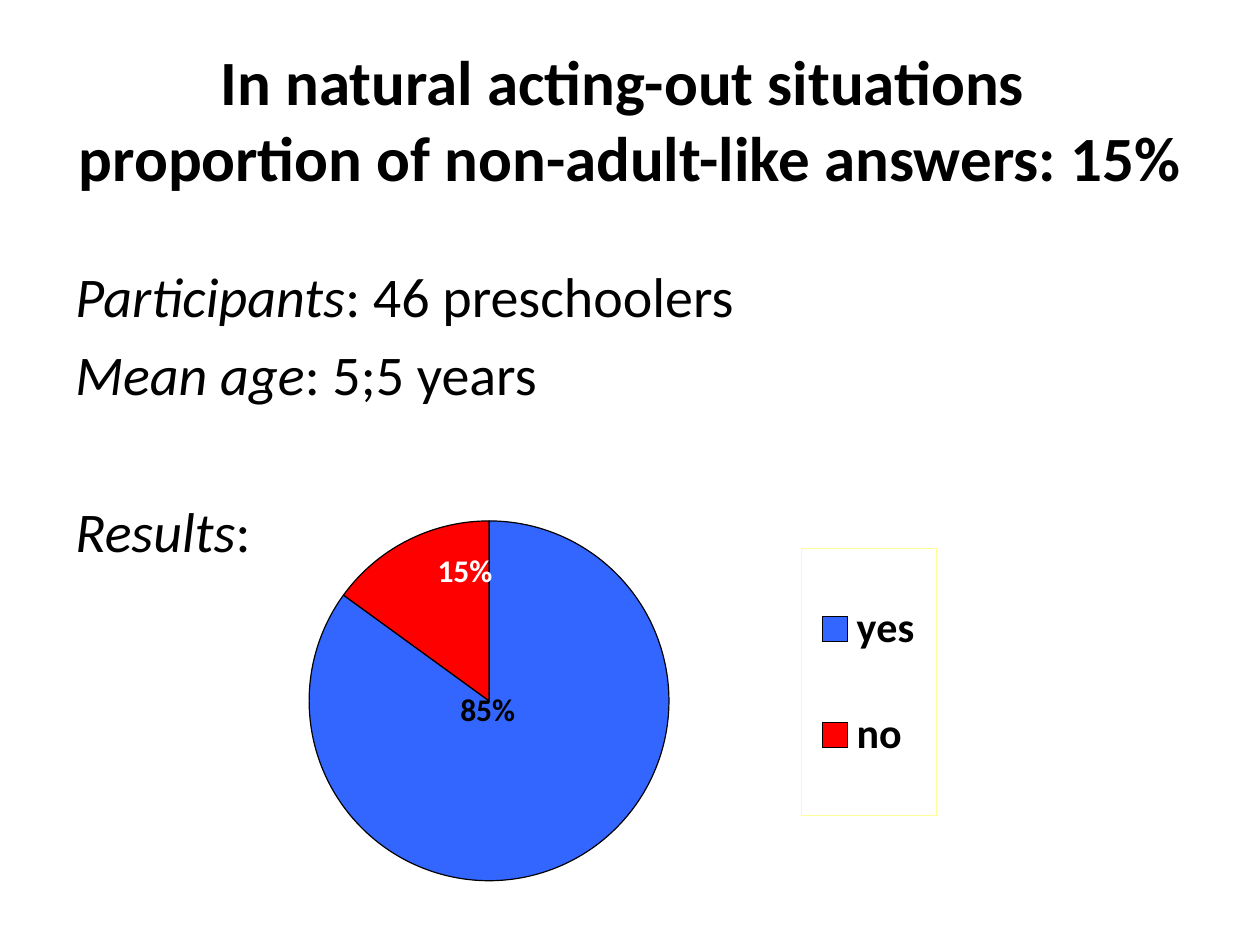
from lxml import etree
from pptx import Presentation, util as u
from pptx.chart.data import CategoryChartData
from pptx.dml.color import RGBColor
from pptx.enum import chart as ch, text as t
from pptx.oxml import parse_xml
from pptx.oxml.ns import nsdecls, qn

WIDTH, HEIGHT = u.Inches(10), u.Inches(7.5)
FONT = "Calibri"


def color(value):
    return RGBColor.from_string(value)


def share(left, top, width, height):
    return [int(part * side) for part, side in
            zip((left, top, width, height), (WIDTH, HEIGHT) * 2)]


def style(font, size, fill="000000", bold=False, italic=False):
    font.name, font.size = FONT, u.Pt(size)
    font.bold, font.italic = bold, italic
    font.color.rgb = color(fill)


def write(paragraph, words, **look):
    run = paragraph.add_run()
    run.text = words
    style(run.font, **look)


def frame_in(slide, box, anchor):
    frame = slide.shapes.add_textbox(*box).text_frame
    frame.word_wrap = True
    frame.vertical_anchor = anchor
    return frame


def heading(slide, box, lines):
    paragraph = frame_in(slide, box, t.MSO_ANCHOR.MIDDLE).paragraphs[0]
    paragraph.alignment = t.PP_ALIGN.CENTER
    for index, line in enumerate(lines):
        if index:
            paragraph.add_line_break()
        write(paragraph, line, size=36, bold=True)


def study_facts(slide, box, facts):
    frame = frame_in(slide, box, t.MSO_ANCHOR.TOP)
    for index, (label, detail, gap) in enumerate(facts):
        paragraph = frame.add_paragraph() if index else frame.paragraphs[0]
        paragraph.space_before = u.Pt(gap)
        write(paragraph, label, size=32, italic=True)
        write(paragraph, detail, size=32)


def manual_layout(**settings):
    layout = etree.Element(qn("c:layout"))
    manual = etree.SubElement(layout, qn("c:manualLayout"))
    for name, value in settings.items():
        etree.SubElement(manual, qn("c:" + name)).set("val", str(value))
    return layout


def place_legend(legend):
    legend.position = ch.XL_LEGEND_POSITION.RIGHT
    legend.include_in_layout = False
    style(legend.font, size=24, bold=True)
    legend._element.find(qn("c:legendPos")).addnext(manual_layout(
        xMode="edge", yMode="edge", x=0.72, y=0.21, w=0.16, h=0.49))
    legend._element.find(qn("c:txPr")).addprevious(parse_xml(
        f'<c:spPr {nsdecls("c", "a")}><a:noFill/><a:ln w="3175"><a:solidFill>'
        '<a:srgbClr val="FFFF99"/></a:solidFill></a:ln></c:spPr>'))


def style_slice(point, fill, label_fill, shift):
    point.format.fill.solid()
    point.format.fill.fore_color.rgb = color(fill)
    point.format.line.color.rgb = color("000000")
    point.format.line.width = u.Pt(0.69)
    label = point.data_label
    style(label.font, size=18, fill=label_fill, bold=True)
    label.position = ch.XL_LABEL_POSITION.CENTER
    node = label._get_or_add_dLbl()
    node.find(qn("c:showVal")).set("val", "0")
    node.find(qn("c:showPercent")).set("val", "1")
    node.find(qn("c:idx")).addnext(manual_layout(x=shift[0], y=shift[1]))


def answer_pie(slide, box, answers):
    data = CategoryChartData()
    data.categories = [answer[0] for answer in answers]
    data.add_series("Series 1", [answer[1] for answer in answers])
    pie = slide.shapes.add_chart(ch.XL_CHART_TYPE.PIE, *box, data).chart
    pie.has_title = False
    style(pie.font, size=12.4)
    pie.has_legend = True
    place_legend(pie.legend)

    plot = pie.plots[0]
    plot.vary_by_categories = True
    area = plot._element.getparent()
    for old in area.findall(qn("c:layout")):
        area.remove(old)
    area.insert(0, manual_layout(layoutTarget="inner", xMode="edge", yMode="edge",
                                 x=0.06, y=0.16, w=0.58, h=0.66))

    series = plot.series[0]
    labels = series.data_labels
    labels.show_value, labels.show_percentage = False, True
    labels.number_format, labels.number_format_is_linked = "0%", False
    style(labels.font, size=18, bold=True)
    for index, (_, _, *look) in enumerate(answers):
        style_slice(series.points[index], *look)


def main():
    deck = Presentation()
    deck.slide_width, deck.slide_height = WIDTH, HEIGHT
    slide = deck.slides.add_slide(deck.slide_layouts[6])
    heading(slide, share(0.05, 0.04, 0.9, 0.17),
            ["In natural acting-out situations ",
             "proportion of non-adult-like answers: 15%"])
    study_facts(slide, share(0.05, 0.27, 0.9, 0.66),
                [("Participants", ": 46 preschoolers", 6.4),
                 ("Mean age", ": 5;5 years", 6.4),
                 ("Results", ":", 51)])
    answer_pie(slide, share(0.154, 0.459, 0.669, 0.577),
               [("yes", 85, "3366FF", "000000", (-0.05, -0.13)),
                ("no", 15, "FF0000", "FFFFFF", (0.02, -0.09))])
    deck.save("out.pptx")


if __name__ == "__main__":
    main()
